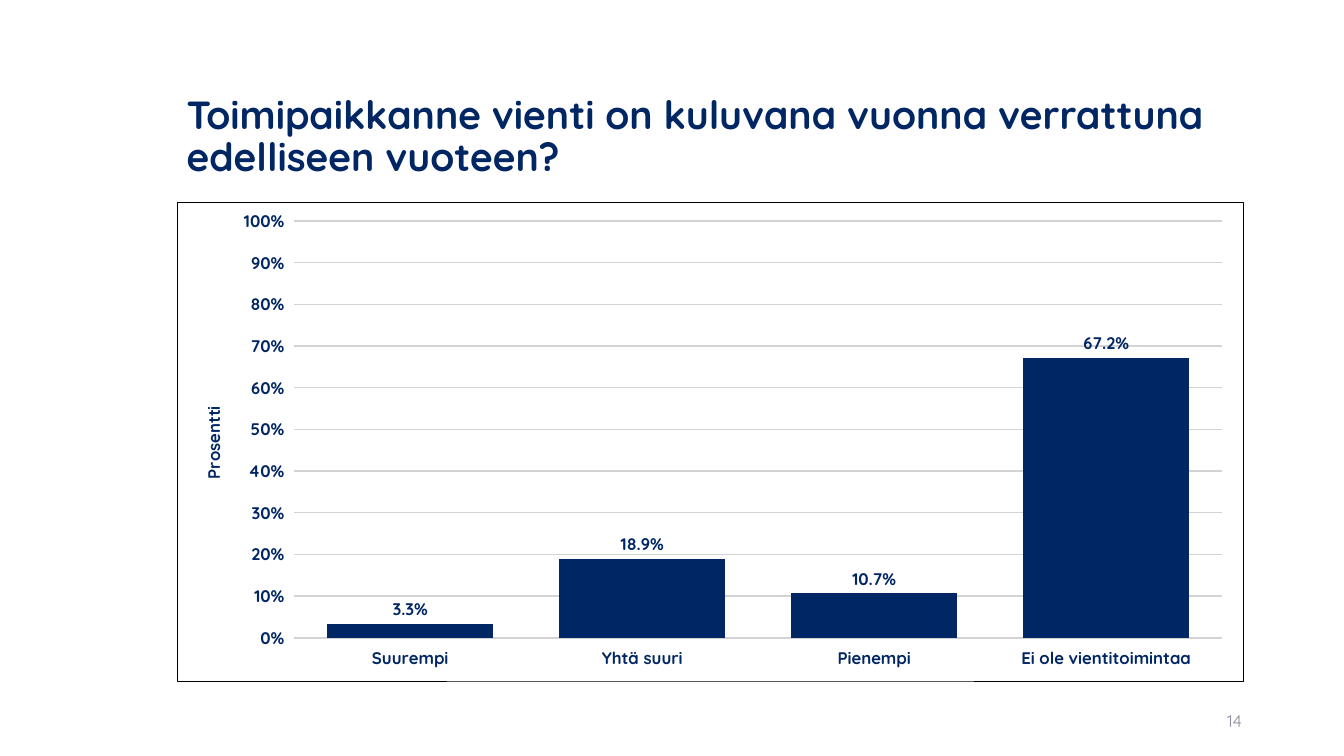
from dataclasses import dataclass

from lxml.etree import _Element
from pptx import Presentation
from pptx.chart.chart import Chart
from pptx.chart.data import CategoryChartData
from pptx.dml.color import RGBColor
from pptx.enum.chart import XL_CHART_TYPE, XL_LABEL_POSITION, XL_TICK_MARK
from pptx.enum.text import MSO_ANCHOR, MSO_AUTO_SIZE, PP_ALIGN
from pptx.oxml import parse_xml
from pptx.oxml.ns import nsdecls, qn
from pptx.slide import Slide
from pptx.text.text import Font
from pptx.util import Cm, Pt

FONT = "Quicksand"
NAVY = RGBColor(0x00, 0x26, 0x63)
GREY = RGBColor(0x8C, 0x8E, 0x9F)
GRID = RGBColor(0xD3, 0xD3, 0xD3)
LEFT, WIDTH = Cm(4.45), Cm(26.9)


@dataclass(frozen=True)
class Answer:
    label: str
    share: float


ANSWERS = [
    Answer("Suurempi", 0.033),
    Answer("Yhtä suuri", 0.189),
    Answer("Pienempi", 0.107),
    Answer("Ei ole vientitoimintaa", 0.672),
]


def style_font(font: Font, size: int, color: RGBColor, bold: bool) -> None:
    font.name = FONT
    font.size = Pt(size)
    font.bold = bold
    font.color.rgb = color


def place(parent: _Element, index: int, **fractions: float) -> None:
    for old in parent.findall(qn("c:layout")):
        parent.remove(old)
    inner = '<c:layoutTarget val="inner"/>' if "w" in fractions else ""
    modes = "".join(f'<c:{key}Mode val="edge"/>' for key in ("x", "y"))
    values = "".join(f'<c:{key} val="{value}"/>' for key, value in fractions.items())
    parent.insert(index, parse_xml(
        f'<c:layout {nsdecls("c")}><c:manualLayout>{inner}{modes}{values}'
        "</c:manualLayout></c:layout>"))


def frame_chart(chart: Chart) -> None:
    chart.element.find(qn("c:txPr")).addprevious(parse_xml(
        f'<c:spPr {nsdecls("c", "a")}><a:noFill/><a:ln w="6350"><a:solidFill>'
        '<a:srgbClr val="000000"/></a:solidFill></a:ln></c:spPr>'))


def add_title(slide: Slide) -> None:
    title = slide.shapes.title
    title.left, title.top, title.width, title.height = LEFT, Cm(1.63), WIDTH, Cm(3.68)
    frame = title.text_frame
    frame.text = "Toimipaikkanne vienti on kuluvana vuonna verrattuna edelliseen vuoteen?"
    frame.word_wrap = True
    frame.auto_size = MSO_AUTO_SIZE.NONE
    frame.vertical_anchor = MSO_ANCHOR.MIDDLE
    question = frame.paragraphs[0]
    question.alignment = PP_ALIGN.LEFT
    question.line_spacing = 0.9
    style_font(question.font, 28, NAVY, True)


def add_answers(slide: Slide) -> None:
    data = CategoryChartData()
    data.categories = [answer.label for answer in ANSWERS]
    data.add_series("Series 1", [answer.share for answer in ANSWERS])
    chart = slide.shapes.add_chart(
        XL_CHART_TYPE.COLUMN_CLUSTERED, LEFT, Cm(5.08), WIDTH, Cm(12.09), data).chart
    style_font(chart.font, 12, NAVY, True)
    chart.has_title = False
    chart.has_legend = False
    frame_chart(chart)

    plot = chart.plots[0]
    plot.vary_by_categories = False
    plot.gap_width = 40
    plot.overlap = -2
    fill = plot.series[0].format.fill
    fill.solid()
    fill.fore_color.rgb = NAVY
    plot.has_data_labels = True
    labels = plot.data_labels
    labels.show_value = True
    labels.number_format = "0.0%"
    labels.number_format_is_linked = False
    labels.position = XL_LABEL_POSITION.OUTSIDE_END
    style_font(labels.font, 12, NAVY, True)

    shares = chart.value_axis
    for axis in (chart.category_axis, shares):
        axis.major_tick_mark = XL_TICK_MARK.OUTSIDE
        axis.format.line.fill.background()
        style_font(axis.tick_labels.font, 12, NAVY, True)
    shares.minimum_scale, shares.maximum_scale, shares.major_unit = 0, 1, 0.1
    shares.tick_labels.number_format = "0%"
    shares.tick_labels.number_format_is_linked = False
    shares.major_gridlines.format.line.color.rgb = GRID
    shares.major_gridlines.format.line.width = Pt(1)
    caption = shares.axis_title.text_frame
    caption.text = "Prosentti"
    style_font(caption.paragraphs[0].font, 12, NAVY, True)

    place(shares.axis_title._element, 1, x=0.02, y=0.42)
    place(chart.element.find(f".//{qn('c:plotArea')}"), 0, x=0.11, y=0.04, w=0.87, h=0.87)


def add_page_number(slide: Slide) -> None:
    frame = slide.shapes.add_textbox(Cm(23.93), Cm(17.65), Cm(7.62), Cm(1.02)).text_frame
    frame.text = "14"
    frame.word_wrap = True
    frame.vertical_anchor = MSO_ANCHOR.MIDDLE
    number = frame.paragraphs[0]
    number.alignment = PP_ALIGN.RIGHT
    style_font(number.font, 12, GREY, False)


def main() -> None:
    presentation = Presentation()
    presentation.slide_width, presentation.slide_height = Cm(33.87), Cm(19.05)
    slide = presentation.slides.add_slide(presentation.slide_layouts[5])
    add_title(slide)
    add_answers(slide)
    add_page_number(slide)
    presentation.save("out.pptx")


if __name__ == "__main__":
    main()
